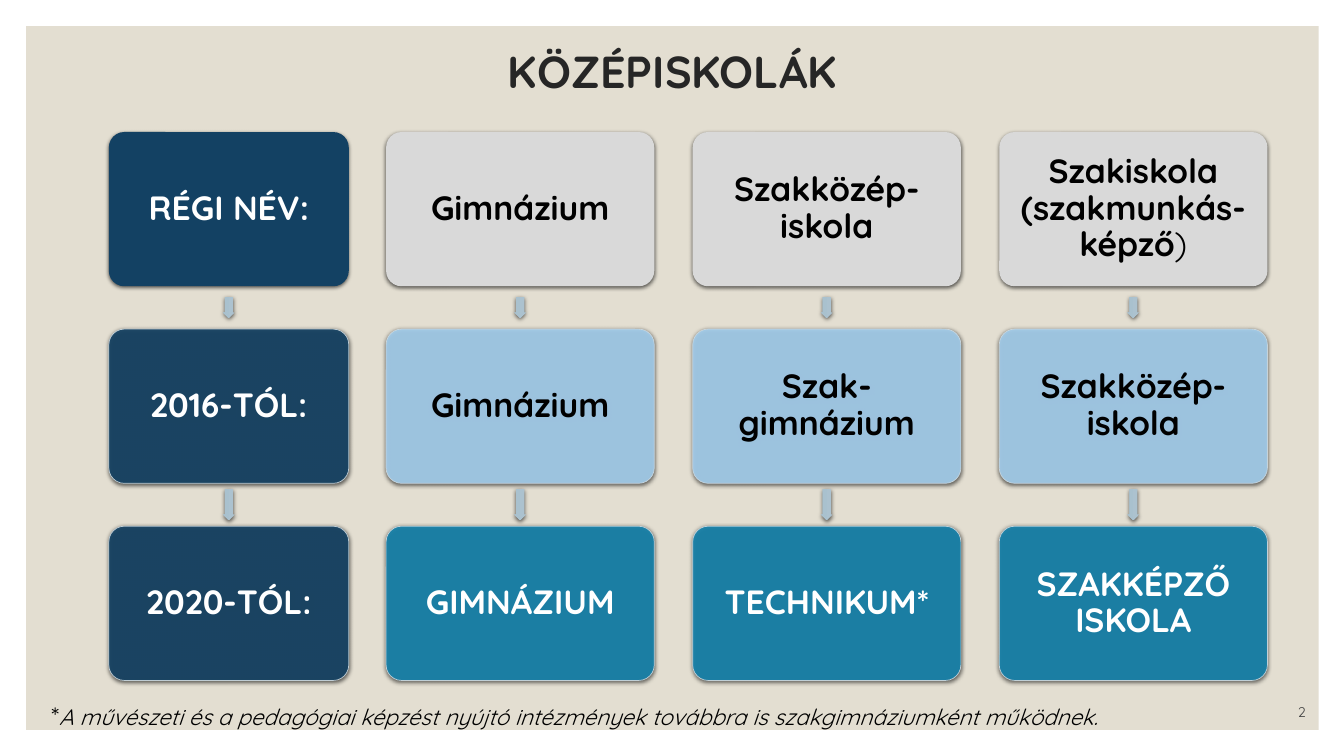
from dataclasses import dataclass

from lxml.etree import SubElement
from pptx import Presentation
from pptx.dml.color import RGBColor
from pptx.enum.shapes import MSO_SHAPE as Preset
from pptx.enum.text import MSO_ANCHOR as Anchor, PP_ALIGN as Align
from pptx.oxml.ns import qn
from pptx.util import Inches, Pt


@dataclass(frozen=True)
class Theme:
    font: str = "Quicksand"
    panel: str = "E3DED1"
    heading: str = "262626"
    muted: str = "404040"
    dark: str = "000000"
    light: str = "FFFFFF"
    navy: str = "134163"
    grey: str = "D9D9D9"
    sky: str = "A3CEED"
    teal: str = "1482AC"
    edge: str = "CCD9E0"
    arrow: tuple = ("ACC2CF", "A9C1CE")
    title_size: int = 32
    box_size: int = 24
    star_size: int = 18
    note_size: int = 16
    number_size: int = 10


@dataclass(frozen=True)
class Grid:
    """Percentages of the slide: one label column, then equal school columns."""
    label_left: float = 8.1
    label_width: float = 17.85
    left: float = 28.73
    width: float = 19.95
    column_step: float = 22.81
    top: float = 17.47
    height: float = 20.4
    row_step: float = 26.07

    def column(self, index):
        if index == 0:
            return self.label_left, self.label_width
        return self.left + (index - 1) * self.column_step, self.width

    def row(self, index):
        return self.top + index * self.row_step


class SchoolSlide:
    def __init__(self, deck, theme, grid):
        self.deck, self.theme, self.grid = deck, theme, grid
        self.slide = deck.slides.add_slide(deck.slide_layouts[5])
        self.shapes = self.slide.shapes

    def place(self, left, top, width, height):
        """Turn percentages of the slide into lengths."""
        across, down = self.deck.slide_width / 100, self.deck.slide_height / 100
        return (round(left * across), round(top * down),
                round(width * across), round(height * down))

    def fill_text(self, frame, parts, color, align, anchor=Anchor.MIDDLE, spacing=None):
        """Fill one paragraph with (text, size, bold, italic) parts."""
        frame.word_wrap = True
        frame.vertical_anchor = anchor
        paragraph = frame.paragraphs[0]
        paragraph.alignment = align
        if spacing:
            paragraph.line_spacing = spacing
        for text, size, bold, italic in parts:
            run = paragraph.add_run()
            run.text = text
            font = run.font
            font.name, font.size = self.theme.font, Pt(size)
            font.bold, font.italic = bold, italic
            font.color.rgb = RGBColor.from_string(color)

    def set_alpha(self, fill_parent, percent):
        color = next(fill_parent.iter(qn("a:srgbClr")))
        SubElement(color, qn("a:alpha"), val=str(percent * 1000))

    def cast_shadow(self, shape):
        shape.shadow.inherit = False
        effects = shape.element.spPr.find(qn("a:effectLst"))
        shadow = SubElement(effects, qn("a:outerShdw"), blurRad=str(Pt(3)),
                            dist=str(Pt(1)), dir="5400000", rotWithShape="0")
        color = SubElement(shadow, qn("a:srgbClr"), val=self.theme.dark)
        SubElement(color, qn("a:alpha"), val="63000")

    def panel(self, *area):
        backdrop = self.shapes.add_shape(Preset.RECTANGLE, *self.place(*area))
        backdrop.fill.solid()
        backdrop.fill.fore_color.rgb = RGBColor.from_string(self.theme.panel)
        backdrop.line.fill.background()
        backdrop.shadow.inherit = False
        self.shapes.title.element.addprevious(backdrop.element)

    def title(self, text, *area):
        heading = self.shapes.title
        heading.left, heading.top, heading.width, heading.height = self.place(*area)
        self.fill_text(heading.text_frame, [(text, self.theme.title_size, True, False)],
                       self.theme.heading, Align.CENTER, spacing=0.9)

    def text(self, parts, color, align, anchor, *area):
        box = self.shapes.add_textbox(*self.place(*area))
        self.fill_text(box.text_frame, parts, color, align, anchor)

    def box(self, column, row, parts, fill, color):
        left, width = self.grid.column(column)
        card = self.shapes.add_shape(
            Preset.ROUNDED_RECTANGLE,
            *self.place(left, self.grid.row(row), width, self.grid.height))
        card.adjustments[0] = 0.1
        card.fill.solid()
        card.fill.fore_color.rgb = RGBColor.from_string(fill)
        if row == 0:
            card.line.fill.background()
        else:
            self.set_alpha(card.element.spPr, 90)
            card.line.color.rgb = RGBColor.from_string(self.theme.edge)
            card.line.width = Pt(0.5)
            self.set_alpha(card.element.spPr.find(qn("a:ln")), 90)
        self.cast_shadow(card)
        frame = card.text_frame
        frame.margin_left = frame.margin_right = Inches(0.07)
        frame.margin_top = frame.margin_bottom = Inches(0.07)
        self.fill_text(frame, parts, color, Align.CENTER, spacing=0.9)

    def arrow(self, column, row, length):
        """Point down from the given row, centred in the gap below it."""
        thickness = 1.6
        left, width = self.grid.column(column)
        gap_middle = (self.grid.row(row) + self.grid.height + self.grid.row(row + 1)) / 2
        pointer = self.shapes.add_shape(
            Preset.RIGHT_ARROW,
            *self.place(left + (width - length) / 2, gap_middle - thickness / 2,
                        length, thickness))
        pointer.rotation = 90
        pointer.adjustments[0] = 0.67
        pointer.fill.gradient()
        pointer.fill.gradient_angle = 270
        for stop, color in zip(pointer.fill.gradient_stops, self.theme.arrow):
            stop.color.rgb = RGBColor.from_string(color)
        pointer.line.fill.background()
        self.cast_shadow(pointer)


SCHOOL_NAMES = [
    ["RÉGI NÉV:", "Gimnázium", "Szakközép-iskola", "Szakiskola (szakmunkás-képző"],
    ["2016-TÓL:", "Gimnázium", "Szak-gimnázium", "Szakközép-iskola"],
    ["2020-TÓL:", "GIMNÁZIUM", "TECHNIKUM*", "SZAKKÉPZŐ ISKOLA"],
]
ARROW_LENGTHS = [1.58, 2.33]


def main():
    deck = Presentation()
    deck.slide_width, deck.slide_height = Inches(13.33), Inches(7.5)
    theme = Theme()
    page = SchoolSlide(deck, theme, Grid())
    page.panel(1.95, 3.47, 96.17, 93.07)
    page.title("KÖZÉPISKOLÁK", 16.28, 4.53, 67.52, 10.53)
    page.text([("2", theme.number_size, False, False)], theme.muted,
              Align.RIGHT, Anchor.BOTTOM, 85.9, 92, 12, 4)

    row_styles = [(theme.grey, theme.dark), (theme.sky, theme.dark),
                  (theme.teal, theme.light)]
    for row, (names, style) in enumerate(zip(SCHOOL_NAMES, row_styles)):
        for column, name in enumerate(names):
            parts = [(name, theme.box_size, True, False)]
            if "(" in name:
                parts.append((")", theme.box_size, False, False))
            fill, color = style if column else (theme.navy, theme.light)
            page.box(column, row, parts, fill, color)
            if row < len(ARROW_LENGTHS):
                page.arrow(column, row, ARROW_LENGTHS[row])

    footnote = ("A művészeti és a pedagógiai képzést nyújtó intézmények "
                "továbbra is szakgimnáziumként működnek.")
    page.text([("*", theme.star_size, False, False),
               (footnote, theme.note_size, False, True)],
              theme.dark, Align.LEFT, Anchor.TOP, 3.08, 92, 96.92, 5.33)
    deck.save("out.pptx")


if __name__ == "__main__":
    main()
